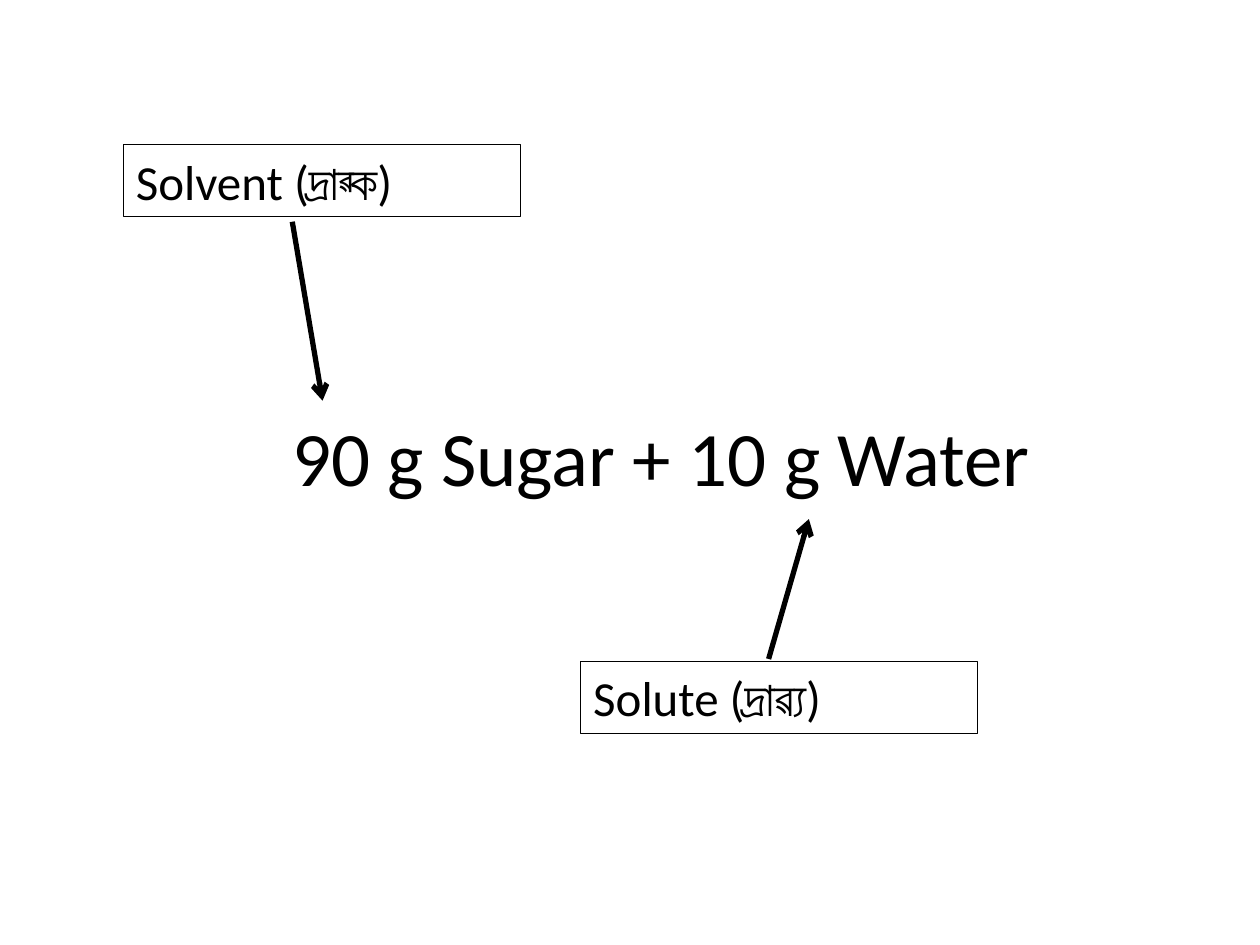
from lxml import etree
from pptx import Presentation, util as u
from pptx.dml.color import RGBColor
from pptx.enum import shapes, text
from pptx.oxml import ns

INK = {"text": "000000", "line": "000000", "back": "FFFFFF"}
COLS, ROWS = 100, 75
WIDE, HIGH = u.Inches(10), u.Inches(7.5)
TAG = (31.5, 5.7)


def hue(name):
    """Return the named colour."""
    return RGBColor.from_string(INK[name])


def place(col, row):
    """Turn grid columns and rows into slide lengths."""
    return round(WIDE * col / COLS), round(HIGH * row / ROWS)


def write(slide, words, box, size=28, align=text.PP_ALIGN.LEFT, wrap=True):
    """Add a text box that fits its words and return it."""
    col, row, wide, high = box
    shape = slide.shapes.add_textbox(*place(col, row), *place(wide, high))
    frame = shape.text_frame
    frame.word_wrap = wrap
    frame.auto_size = text.MSO_AUTO_SIZE.SHAPE_TO_FIT_TEXT
    para = frame.paragraphs[0]
    para.alignment = align
    run = para.add_run()
    run.text = words
    run.font.name = "Calibri"
    run.font.size = u.Pt(size)
    run.font.color.rgb = hue("text")
    return shape


def point(slide, start, end):
    """Draw a thick arrow between two grid points."""
    line = slide.shapes.add_connector(
        shapes.MSO_CONNECTOR.STRAIGHT, *place(*start), *place(*end))
    line.line.color.rgb = hue("line")
    line.line.width = u.Pt(3)
    tail = etree.SubElement(line.line._get_or_add_ln(), ns.qn("a:tailEnd"))
    tail.set("type", "arrow")
    etree.SubElement(line._element.spPr, ns.qn("a:effectLst"))


def label(slide, words, spot, start, end):
    """Add a framed label and the arrow to what it names."""
    frame = write(slide, words, (*spot, *TAG))
    frame.line.color.rgb = hue("line")
    frame.line.width = u.Pt(0.75)
    point(slide, start, end)


def mixture(slide):
    """Build the mixture with its two labelled parts."""
    write(slide, "90 g Sugar + 10 g Water", (21.9, 32, 61.2, 8.4),
          size=44, align=text.PP_ALIGN.CENTER, wrap=False)
    label(slide, "Solute (দ্রাৱ্য)", (46.1, 52.5), (61, 52.3), (64.2, 41.2))
    label(slide, "Solvent (দ্রাৱ্ক)", (9.8, 11.5), (23.2, 17.6), (25.6, 31.8))


def main():
    """Make the deck and save it."""
    deck = Presentation()
    deck.slide_width, deck.slide_height = WIDE, HIGH
    slide = deck.slides.add_slide(deck.slide_layouts[6])
    slide.background.fill.solid()
    slide.background.fill.fore_color.rgb = hue("back")
    mixture(slide)
    deck.save("out.pptx")


if __name__ == "__main__":
    main()
